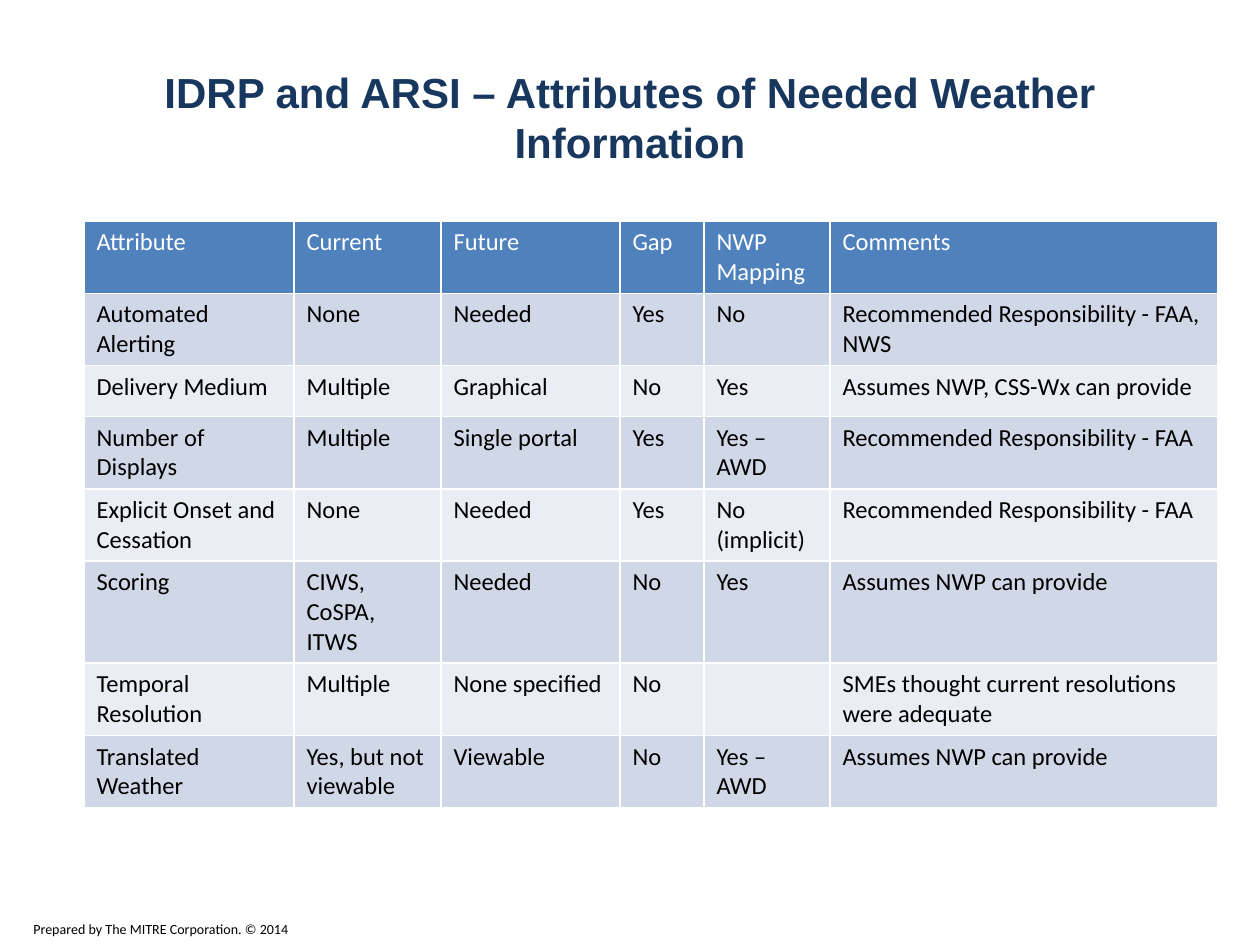
from dataclasses import dataclass

from pptx import Presentation
from pptx.dml.color import RGBColor
from pptx.enum.text import MSO_ANCHOR, PP_ALIGN
from pptx.util import Pt

CENTER = PP_ALIGN.CENTER
MIDDLE = MSO_ANCHOR.MIDDLE
SCALE = 914400 / 126


@dataclass(frozen=True)
class Theme:
    head: str = "Arial"
    body: str = "Calibri"
    navy: str = "17375E"
    blue: str = "4F81BD"
    bands: tuple = ("D0D8E8", "E9EDF4")
    white: str = "FFFFFF"
    black: str = "000000"
    title: int = 24
    cell: int = 14
    note: int = 8


THEME = Theme()
COLS = (210, 147, 179, 84, 126, 388)
ROW = 51
ROWS = (
    ("Attribute", "Current", "Future", "Gap", "NWP Mapping", "Comments"),
    ("Automated Alerting", "None", "Needed", "Yes", "No",
     "Recommended Responsibility - FAA, NWS"),
    ("Delivery Medium", "Multiple", "Graphical", "No", "Yes",
     "Assumes NWP, CSS-Wx can provide"),
    ("Number of Displays", "Multiple", "Single portal", "Yes", "Yes – AWD",
     "Recommended Responsibility - FAA"),
    ("Explicit Onset and Cessation", "None", "Needed", "Yes", "No (implicit)",
     "Recommended Responsibility - FAA"),
    ("Scoring", "CIWS, CoSPA, ITWS", "Needed", "No", "Yes",
     "Assumes NWP can provide"),
    ("Temporal Resolution", "Multiple", "None specified", "No", "",
     "SMEs thought current resolutions were adequate"),
    ("Translated Weather", "Yes, but not viewable", "Viewable", "No",
     "Yes – AWD", "Assumes NWP can provide"),
)


def px(count):
    return round(count * SCALE)


def style(para, face, size, color, bold=False):
    font = para.font
    font.name = face
    font.size = Pt(size)
    font.bold = bold
    font.color.rgb = RGBColor.from_string(color)


def add_title(slide, box, text):
    title = slide.shapes.title
    title.left, title.top, title.width, title.height = map(px, box)
    frame = title.text_frame
    frame.text = text
    frame.vertical_anchor = MIDDLE
    para = frame.paragraphs[0]
    para.alignment = CENTER
    style(para, THEME.head, THEME.title, THEME.navy, True)


def add_grid(slide, box, rows):
    table = slide.shapes.add_table(len(rows), len(COLS), *map(px, box)).table
    for col, width in zip(table.columns, COLS):
        col.width = px(width)
    for i, (row, texts) in enumerate(zip(table.rows, rows)):
        row.height = px(ROW)
        fill = THEME.bands[(i - 1) % 2] if i else THEME.blue
        ink = THEME.black if i else THEME.white
        for cell, text in zip(row.cells, texts):
            cell.text = text
            cell.fill.solid()
            cell.fill.fore_color.rgb = RGBColor.from_string(fill)
            style(cell.text_frame.paragraphs[0], THEME.body, THEME.cell, ink)


def add_note(slide, box, text):
    frame = slide.shapes.add_textbox(*map(px, box)).text_frame
    frame.word_wrap = True
    frame.text = text
    para = frame.paragraphs[0]
    para.space_after = Pt(6)
    style(para, THEME.body, THEME.note, THEME.black)


def main():
    deck = Presentation()
    deck.slide_width, deck.slide_height = px(1260), px(945)
    slide = deck.slides.add_slide(deck.slide_layouts[5])
    add_title(slide, (63, 38, 1134, 158),
              "IDRP and ARSI – Attributes of Needed Weather Information")
    add_grid(slide, (84, 221, sum(COLS), ROW * len(ROWS)), ROWS)
    add_note(slide, (21, 914, 352, 30),
             "Prepared by The MITRE Corporation. © 2014")
    deck.save("out.pptx")


if __name__ == "__main__":
    main()
